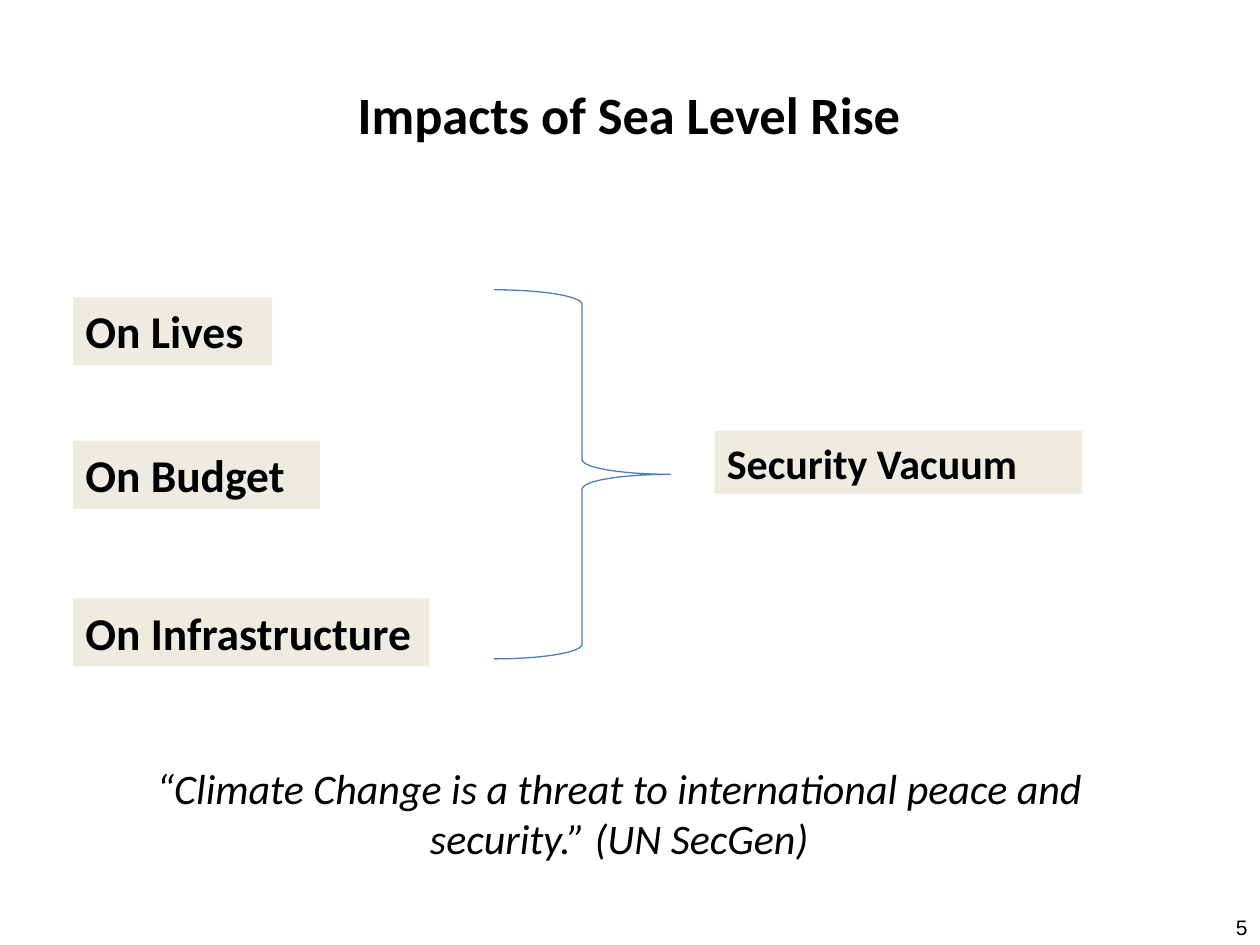
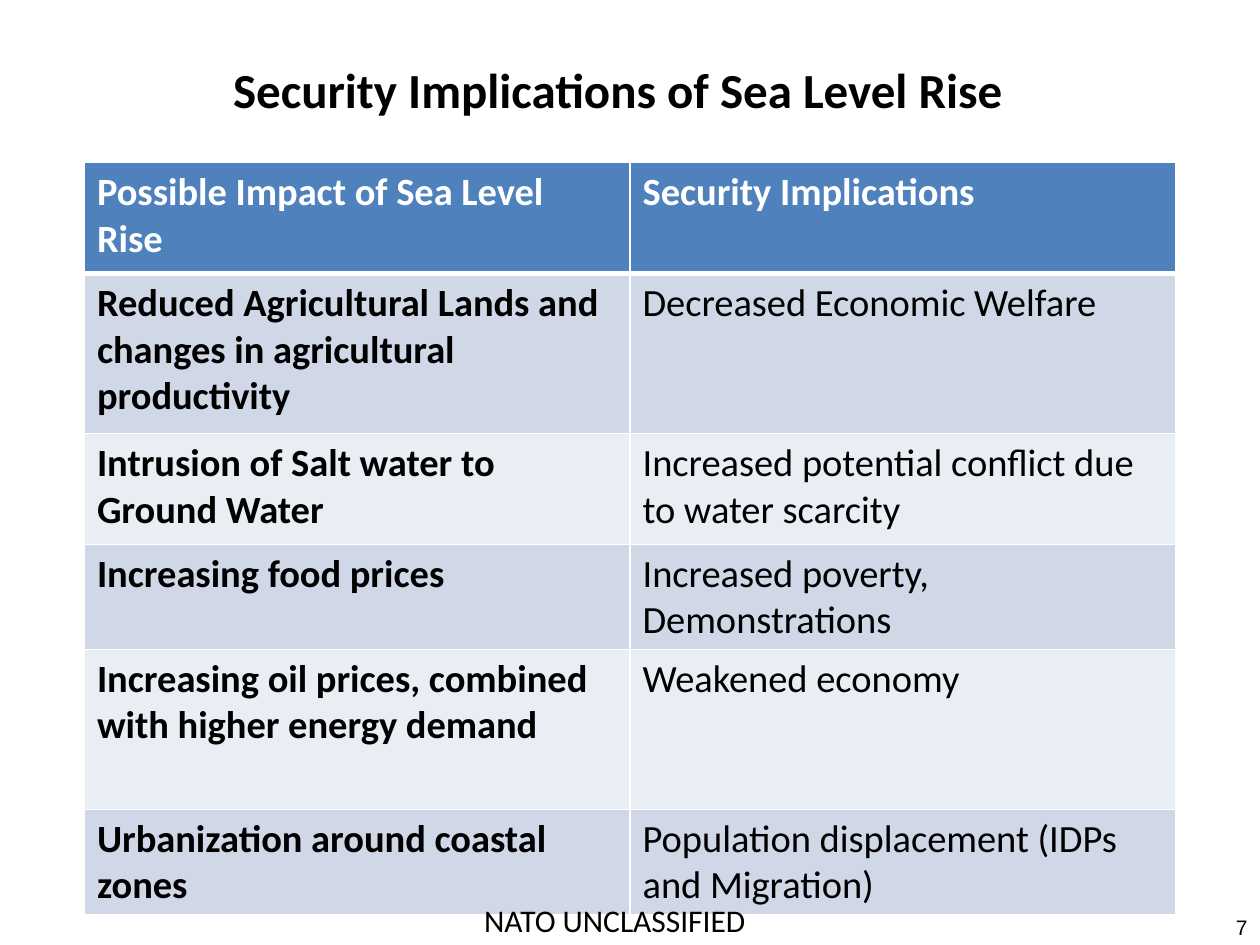
"""Build two slides on the impacts and security implications of sea level rise."""
from lxml import etree
from pptx import Presentation
from pptx import util as u
from pptx.dml.color import RGBColor
from pptx.enum import shapes, text
from pptx.oxml import ns

BLACK = RGBColor(0x00, 0x00, 0x00)
WHITE = RGBColor(0xFF, 0xFF, 0xFF)
SAND = RGBColor(0xEE, 0xEC, 0xE1)
BRACE_BLUE = RGBColor(0x4B, 0x7E, 0xBC)
HEADER_BLUE = RGBColor(0x4F, 0x81, 0xBD)
BANDS = (RGBColor(0xD0, 0xD8, 0xE8), RGBColor(0xE9, 0xED, 0xF4))
LEFT, CENTER, RIGHT = text.PP_ALIGN.LEFT, text.PP_ALIGN.CENTER, text.PP_ALIGN.RIGHT


def write(tf, words, size=24, bold=False, italic=False, color=BLACK, font="Calibri", align=LEFT):
    tf.word_wrap = True
    tf.vertical_anchor = text.MSO_ANCHOR.TOP
    p = tf.paragraphs[0]
    p.alignment = align
    r = p.add_run()
    r.text = words
    r.font.name, r.font.size = font, u.Pt(size)
    r.font.bold, r.font.italic = bold, italic
    r.font.color.rgb = color


def set_border(cell, side, width):
    ln = etree.SubElement(cell._tc.get_or_add_tcPr(), ns.qn(f"a:ln{side}"), w=str(u.Pt(width)))
    fill = etree.SubElement(ln, ns.qn("a:solidFill"))
    etree.SubElement(fill, ns.qn("a:srgbClr"), val=str(WHITE))


prs = Presentation()
prs.slide_width, prs.slide_height = u.Inches(10), u.Inches(7.5)

pages = [
    ("Impacts of Sea Level Rise", (1.83, 0.6, 6.33, 0.61), 30, CENTER, "5"),
    ("Security Implications of Sea Level Rise", (1.75, 0.42, 6.42, 0.98), 28, LEFT, "7"),
]
for title, box, size, align, number in pages:
    s = prs.slides.add_slide(prs.slide_layouts[5])
    sp = s.shapes.title
    sp.left, sp.top, sp.width, sp.height = map(u.Inches, box)
    sp.text_frame.auto_size = text.MSO_AUTO_SIZE.NONE
    write(sp.text_frame, title, size=size, bold=True, align=align)
    sp = s.shapes.add_textbox(*map(u.Inches, (9.58, 7.21, 0.42, 0.29)))
    write(sp.text_frame, number, size=12, font="Arial", align=RIGHT)

impacts, implications = prs.slides

labels = [
    ("On Lives", (0.58, 2.36, 1.58, 0.54), 26),
    ("On Budget", (0.58, 3.5, 1.96, 0.54), 26),
    ("On Infrastructure", (0.58, 4.75, 2.83, 0.54), 26),
    ("Security Vacuum", (5.67, 3.42, 2.92, 0.5), 24),
]
for label, box, size in labels:
    sp = impacts.shapes.add_shape(shapes.MSO_SHAPE.RECTANGLE, *map(u.Inches, box))
    sp.shadow.inherit = False
    sp.fill.solid()
    sp.fill.fore_color.rgb = SAND
    sp.line.fill.background()
    write(sp.text_frame, label, size=size, bold=True)

brace = impacts.shapes.add_shape(
    shapes.MSO_SHAPE.RIGHT_BRACE, *map(u.Inches, (3.92, 2.3, 1.4, 2.93)))
brace.shadow.inherit = False
brace.fill.background()
brace.line.color.rgb = BRACE_BLUE
brace.line.width = u.Pt(0.75)

quote = impacts.shapes.add_textbox(*map(u.Inches, (0.58, 6, 8.67, 0.91)))
write(quote.text_frame,
      "“Climate Change is a threat to international peace and security.” (UN SecGen)",
      italic=True, align=CENTER)

rows = [
    ("Possible Impact of Sea Level Rise", "Security Implications", 0.88),
    ("Reduced Agricultural Lands and changes in agricultural productivity",
     "Decreased Economic Welfare", 1.27),
    ("Intrusion of Salt water to Ground Water",
     "Increased potential conflict due to water scarcity", 0.88),
    ("Increasing food prices", "Increased poverty, Demonstrations", 0.83),
    ("Increasing oil prices, combined with higher energy demand", "Weakened economy", 1.27),
    ("Urbanization around coastal zones", "Population displacement (IDPs and Migration)", 0.83),
]
table = implications.shapes.add_table(
    len(rows), 2, *map(u.Inches, (0.67, 1.29, 8.66, 5.96))).table
for i, (impact, implication, height) in enumerate(rows):
    table.rows[i].height = u.Inches(height)
    header = i == 0
    for j, words in enumerate((impact, implication)):
        cell = table.cell(i, j)
        for side in "LRTB":
            thick = (header and side == "B") or (i == 1 and side == "T")
            set_border(cell, side, 3 if thick else 1)
        cell.fill.solid()
        cell.fill.fore_color.rgb = HEADER_BLUE if header else BANDS[(i - 1) % 2]
        write(cell.text_frame, words, size=22, bold=header or j == 0,
              color=WHITE if header else BLACK)

marking = implications.shapes.add_textbox(*map(u.Inches, (2.67, 7.1, 4.42, 0.4)))
write(marking.text_frame, "NATO UNCLASSIFIED", size=18, align=CENTER)

prs.save("out.pptx")
